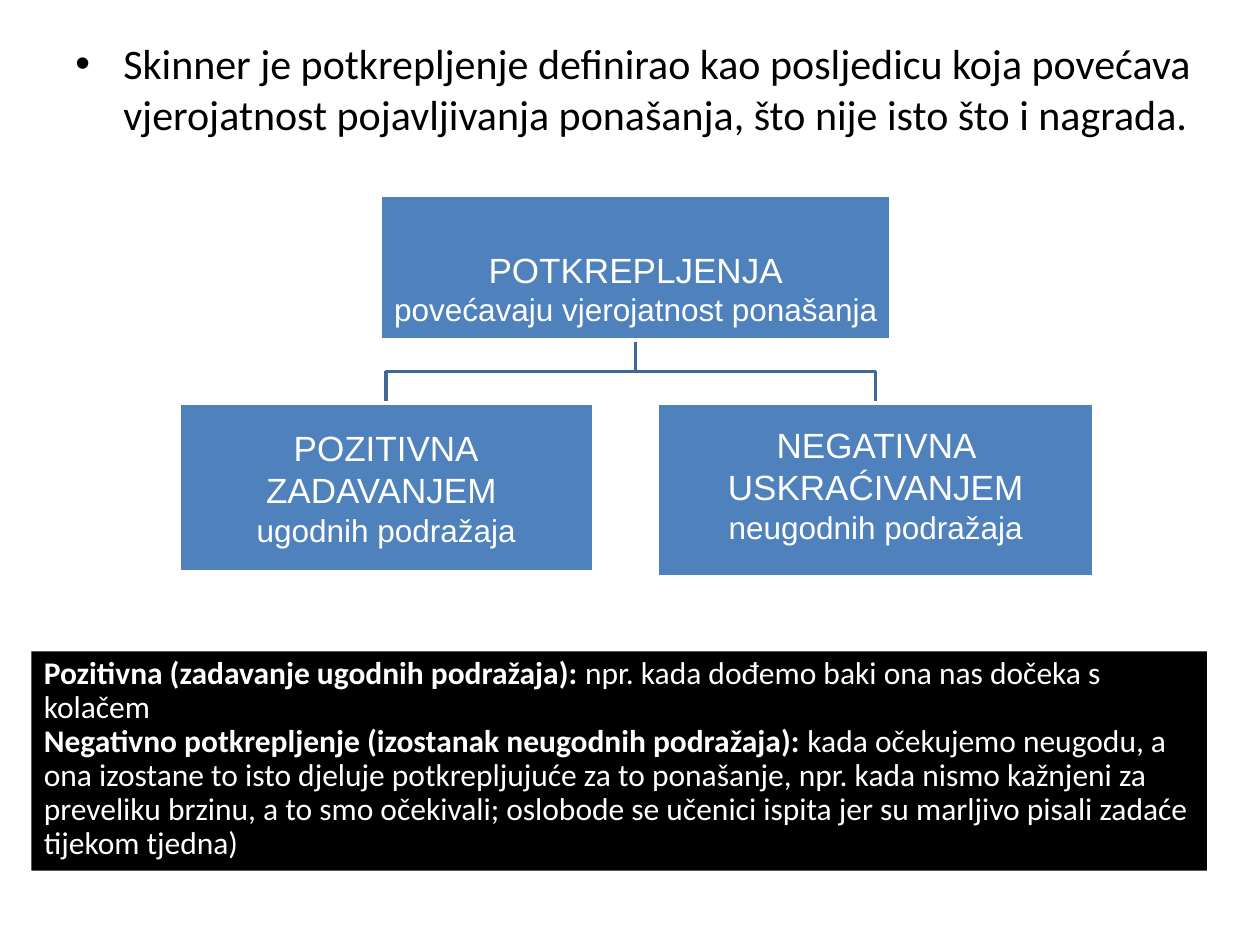
"""Build a slide on reinforcement with a small hierarchy and an example panel."""
import pptx
import pptx.dml.color
import pptx.enum.shapes
import pptx.enum.text
import pptx.oxml
import pptx.oxml.ns
import pptx.util

WIDTH, HEIGHT = pptx.util.Inches(10), pptx.util.Inches(7.5)
COLORS = {"text": "000000", "panel": "000000", "box": "4F81BD", "branch": "3F6797", "light": "FFFFFF"}
INTRO = ("Skinner je potkrepljenje definirao kao posljedicu koja povećava "
         "vjerojatnost pojavljivanja ponašanja, što nije isto što i nagrada.")
INTRO_AREA = (5, 3.33, 92.5, 18.93)
PANEL_AREA = (2.5, 68.93, 93.3, 23.2)
BOXES = [
    {"area": (30.2, 20.67, 40.5, 15.33), "padding": (0.33, 0.01),
     "lines": [("POTKREPLJENJA", 20), ("povećavaju vjerojatnost ponašanja", 18)]},
    {"area": (14.2, 42.67, 32.9, 17.87), "padding": (0.01, 0.01),
     "lines": [("POZITIVNA", 20), ("ZADAVANJEM ", 20), ("ugodnih podražaja", 18)]},
    {"area": (52.2, 42.67, 34.6, 18.4), "padding": (0.01, 0.1),
     "lines": [("NEGATIVNA USKRAĆIVANJEM", 20), ("neugodnih podražaja", 18)]},
]
EXAMPLES = [
    ("Pozitivna (zadavanje ugodnih podražaja): ",
     "npr. kada dođemo baki ona nas dočeka s kolačem"),
    ("Negativno potkrepljenje (izostanak neugodnih podražaja):",
     " kada očekujemo neugodu, a ona izostane to isto djeluje potkrepljujuće za to ponašanje, "
     "npr. kada nismo kažnjeni za preveliku brzinu, a to smo očekivali; oslobode se učenici "
     "ispita jer su marljivo pisali zadaće tijekom tjedna)"),
]


def color(name):
    return pptx.dml.color.RGBColor.from_string(COLORS[name])


def place(area):
    sides = (WIDTH, HEIGHT, WIDTH, HEIGHT)
    return [pptx.util.Emu(round(side * share / 100)) for side, share in zip(sides, area)]


def format_run(run, size, font, tint, bold=False):
    run.font.size = pptx.util.Pt(size)
    run.font.name = font
    run.font.color.rgb = color(tint)
    run.font.bold = bold


def draw_line(shape, tint):
    shape.line.color.rgb = color(tint)
    shape.line.width = pptx.util.Pt(2)


def add_rectangle(slide, area, fill):
    shape = slide.shapes.add_shape(pptx.enum.shapes.MSO_SHAPE.RECTANGLE, *place(area))
    shape.shadow.inherit = False
    shape.fill.solid()
    shape.fill.fore_color.rgb = color(fill)
    shape.text_frame.word_wrap = True
    return shape


def add_intro(slide):
    frame = slide.shapes.add_textbox(*place(INTRO_AREA)).text_frame
    frame.word_wrap = True
    frame.text = INTRO
    paragraph = frame.paragraphs[0]
    format_run(paragraph.runs[0], 24, "Calibri", "text")
    indent = pptx.util.Inches(0.38)
    properties = paragraph._p.get_or_add_pPr()
    properties.set("marL", str(indent))
    properties.set("indent", str(-indent))
    namespace = pptx.oxml.ns.nsdecls("a")
    properties.append(pptx.oxml.parse_xml(f'<a:buFont {namespace} typeface="Arial"/>'))
    properties.append(pptx.oxml.parse_xml(f'<a:buChar {namespace} char="•"/>'))


def add_branch(slide, parent, child):
    left, top, width, height = place(parent)
    child_left, child_top, child_width, _ = place(child)
    start, end = left + width // 2, child_left + child_width // 2
    bottom = top + height
    middle = (bottom + child_top) // 2
    builder = slide.shapes.build_freeform(start, bottom)
    builder.add_line_segments([(start, middle), (end, middle), (end, child_top)], close=False)
    branch = builder.convert_to_shape()
    branch.shadow.inherit = False
    branch.fill.background()
    draw_line(branch, "branch")


def add_box(slide, box):
    shape = add_rectangle(slide, box["area"], "box")
    draw_line(shape, "light")
    frame = shape.text_frame
    frame.vertical_anchor = pptx.enum.text.MSO_ANCHOR.MIDDLE
    frame.margin_left = frame.margin_right = pptx.util.Inches(0.01)
    frame.margin_top, frame.margin_bottom = map(pptx.util.Inches, box["padding"])
    frame.text = "\n".join(text for text, _ in box["lines"])
    for paragraph, (_, size) in zip(frame.paragraphs, box["lines"]):
        paragraph.alignment = pptx.enum.text.PP_ALIGN.CENTER
        format_run(paragraph.runs[0], size, "Arial", "light")


def add_panel(slide):
    shape = add_rectangle(slide, PANEL_AREA, "panel")
    shape.line.fill.background()
    frame = shape.text_frame
    frame.vertical_anchor = pptx.enum.text.MSO_ANCHOR.TOP
    frame.auto_size = pptx.enum.text.MSO_AUTO_SIZE.SHAPE_TO_FIT_TEXT
    frame.text = "\n".join(heading for heading, _ in EXAMPLES)
    for paragraph, (_, example) in zip(frame.paragraphs, EXAMPLES):
        paragraph.alignment = pptx.enum.text.PP_ALIGN.LEFT
        paragraph.line_spacing = 0.9
        format_run(paragraph.runs[0], 18, "Calibri", "light", bold=True)
        run = paragraph.add_run()
        run.text = example
        format_run(run, 18, "Calibri", "light")


def main():
    presentation = pptx.Presentation()
    presentation.slide_width, presentation.slide_height = WIDTH, HEIGHT
    slide = presentation.slides.add_slide(presentation.slide_layouts[6])
    add_intro(slide)
    parent, *children = BOXES
    for child in children:
        add_branch(slide, parent["area"], child["area"])
    for box in BOXES:
        add_box(slide, box)
    add_panel(slide)
    presentation.save("out.pptx")


if __name__ == "__main__":
    main()
